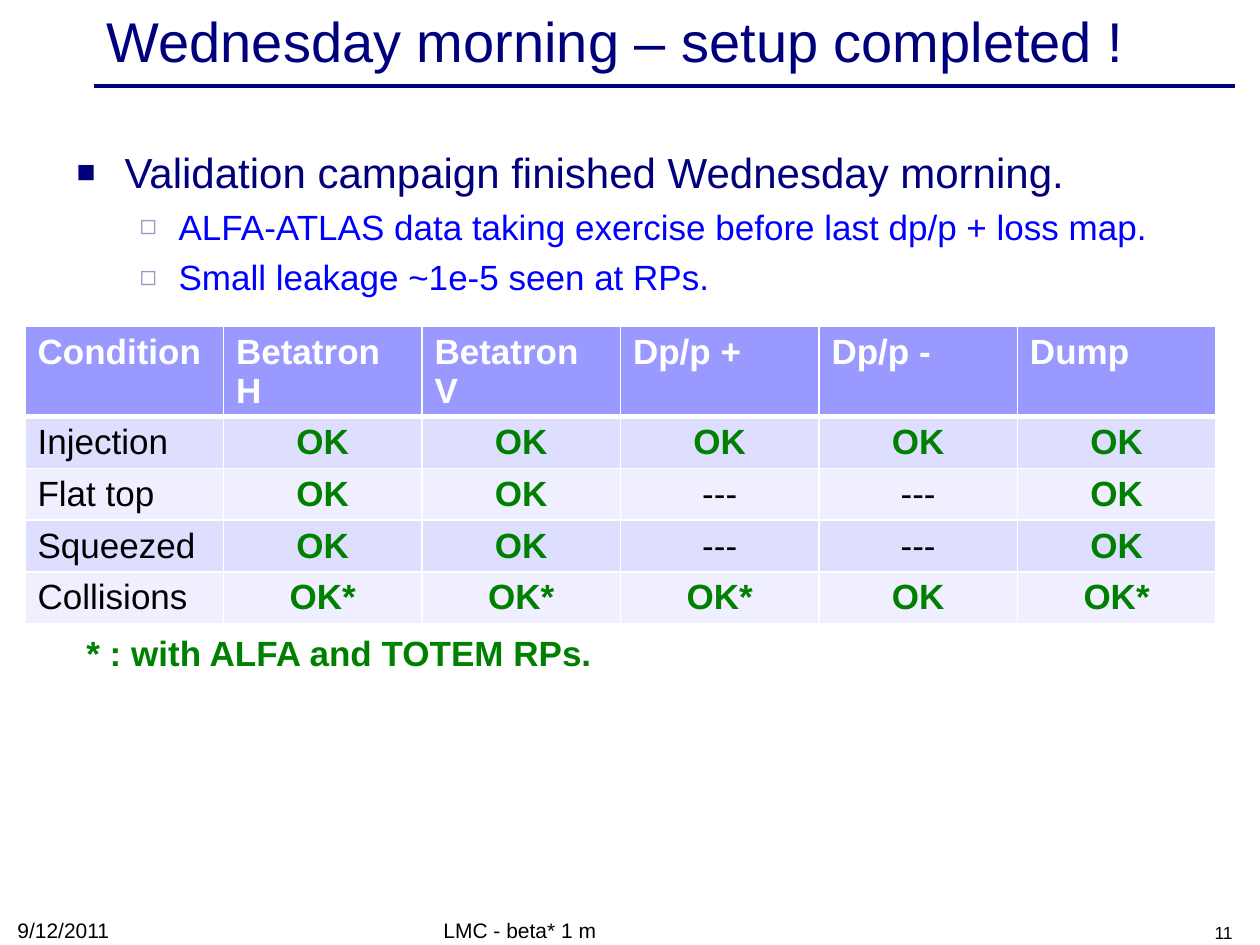
from lxml import etree
from pptx import Presentation
from pptx.dml.color import RGBColor
from pptx.enum import shapes, text
from pptx.oxml.ns import qn
from pptx.util import Pt

PX = 914400 / 126
FONT = "Arial"
NAVY = RGBColor(0x00, 0x00, 0x7D)
BLUE = RGBColor(0x00, 0x00, 0xFF)
LAVENDER = RGBColor(0x99, 0x99, 0xCC)
GREEN = RGBColor(0x00, 0x80, 0x00)
BLACK = RGBColor(0x00, 0x00, 0x00)
WHITE = RGBColor(0xFF, 0xFF, 0xFF)
HEADER_FILL = RGBColor(0x99, 0x99, 0xFF)
BAND_FILLS = [RGBColor(0xDE, 0xDE, 0xFF), RGBColor(0xEF, 0xEF, 0xFF)]
LEFT, CENTER, RIGHT = text.PP_ALIGN.LEFT, text.PP_ALIGN.CENTER, text.PP_ALIGN.RIGHT
TOP, MIDDLE, BOTTOM = (text.MSO_ANCHOR.TOP, text.MSO_ANCHOR.MIDDLE,
                       text.MSO_ANCHOR.BOTTOM)

TITLE = "Wednesday morning – setup completed !"
POINTS = [
    (0, "Validation campaign finished Wednesday morning."),
    (1, "ALFA-ATLAS data taking exercise before last dp/p + loss map."),
    (1, "Small leakage ~1e-5 seen at RPs."),
]
# Per level: size, colour, bullet, bullet colour, bullet %, left margin px, hanging px
LEVELS = [
    (24, NAVY, "■", NAVY, 75, 48, 48),
    (20, BLUE, "◻", LAVENDER, 80, 102, 39),
]
CHECKS = [
    ["Condition", "Betatron H", "Betatron V", "Dp/p +", "Dp/p -", "Dump"],
    ["Injection", "OK", "OK", "OK", "OK", "OK"],
    ["Flat top", "OK", "OK", "---", "---", "OK"],
    ["Squeezed", "OK", "OK", "---", "---", "OK"],
    ["Collisions", "OK*", "OK*", "OK*", "OK", "OK*"],
]
FOOTNOTE = "* : with ALFA and TOTEM RPs."
# Text, box in px, size, alignment
FOOTERS = [
    ("9/12/2011", (5, 912, 294, 37), 12, LEFT),
    ("LMC - beta* 1 m", (431, 914, 399, 35), 12, LEFT),
    ("11", (951, 914, 294, 35), 10, RIGHT),
]


def px(*lengths):
    return [round(length * PX) for length in lengths]


def write(paragraph, words, size=20, color=BLACK, bold=False, align=LEFT, before=0):
    paragraph.alignment = align
    paragraph.space_before = Pt(before)
    run = paragraph.add_run()
    run.text = words
    run.font.name, run.font.size, run.font.bold = FONT, Pt(size), bold
    run.font.color.rgb = color


def prepare(shape, box, anchor=TOP, wrap=True, margin_top=6):
    """Place a text shape, fix its frame settings and return the frame."""
    shape.left, shape.top, shape.width, shape.height = px(*box)
    frame = shape.text_frame
    frame.auto_size = text.MSO_AUTO_SIZE.NONE
    frame.word_wrap = wrap
    frame.vertical_anchor = anchor
    frame.margin_top, = px(margin_top)
    return frame


def add_text(slide, words, box, anchor=TOP, wrap=True, margin_top=6, **style):
    frame = prepare(slide.shapes.add_textbox(0, 0, 0, 0), box, anchor, wrap, margin_top)
    write(frame.paragraphs[0], words, **style)


def set_bullet(paragraph, char, color, percent, margin, hanging):
    props = paragraph._p.get_or_add_pPr()
    margin, hanging = px(margin, hanging)
    props.set("marL", str(margin))
    props.set("indent", str(-hanging))
    tint = etree.SubElement(props, qn("a:buClr"))
    etree.SubElement(tint, qn("a:srgbClr"), val=str(color))
    etree.SubElement(props, qn("a:buSzPct"), val=str(percent * 1000))
    etree.SubElement(props, qn("a:buFont"), typeface=FONT)
    etree.SubElement(props, qn("a:buChar"), char=char)


def set_borders(cell, **points):
    """Draw white borders; the keywords L, R, T and B give their widths."""
    props = cell._tc.get_or_add_tcPr()
    for side, width in points.items():
        line = etree.SubElement(props, qn(f"a:ln{side}"), w=str(Pt(width)))
        fill = etree.SubElement(line, qn("a:solidFill"))
        etree.SubElement(fill, qn("a:srgbClr"), val=str(WHITE))


def cell_style(row, column, words):
    if row == 0:
        return dict(color=WHITE, bold=True)
    if column == 0:
        return {}
    if words.startswith("OK"):
        return dict(color=GREEN, bold=True, align=CENTER)
    return dict(align=CENTER)


def add_checks(slide):
    rows, columns = len(CHECKS), len(CHECKS[0])
    checks = slide.shapes.add_table(rows, columns, *px(25, 326, 1191, 51 * rows)).table
    for row, entries in enumerate(CHECKS):
        fill = BAND_FILLS[(row - 1) % 2] if row else HEADER_FILL
        for column, words in enumerate(entries):
            cell = checks.cell(row, column)
            set_borders(cell, L=1, R=1, T=3 if row == 1 else 1, B=1 if row else 3)
            cell.fill.solid()
            cell.fill.fore_color.rgb = fill
            write(cell.text_frame.paragraphs[0], words, **cell_style(row, column, words))


def main():
    deck = Presentation()
    deck.slide_width, deck.slide_height = px(1260, 945)
    slide = deck.slides.add_slide(deck.slide_layouts[1])

    rule = slide.shapes.add_connector(shapes.MSO_CONNECTOR.STRAIGHT,
                                      *px(94, 86, 1235, 86))
    rule.line.color.rgb, rule.line.width = NAVY, Pt(2)
    etree.SubElement(rule._element.spPr, qn("a:effectLst"))

    title = prepare(slide.shapes.title, (94, 4, 1134, 72), MIDDLE)
    write(title.paragraphs[0], TITLE, size=32, color=NAVY)

    body = prepare(slide.placeholders[1], (64, 135, 1152, 168), margin_top=11)
    for number, (level, words) in enumerate(POINTS):
        size, color, *bullet = LEVELS[level]
        paragraph = body.add_paragraph() if number else body.paragraphs[0]
        paragraph.level = level
        set_bullet(paragraph, *bullet)
        write(paragraph, words, size=size, color=color, before=5 if number else 0)

    add_checks(slide)
    add_text(slide, FOOTNOTE, (74, 621, 534, 55), wrap=False, margin_top=10,
             color=GREEN, bold=True)
    for words, box, size, align in FOOTERS:
        add_text(slide, words, box, anchor=BOTTOM, size=size, align=align)

    deck.save("out.pptx")


if __name__ == "__main__":
    main()
